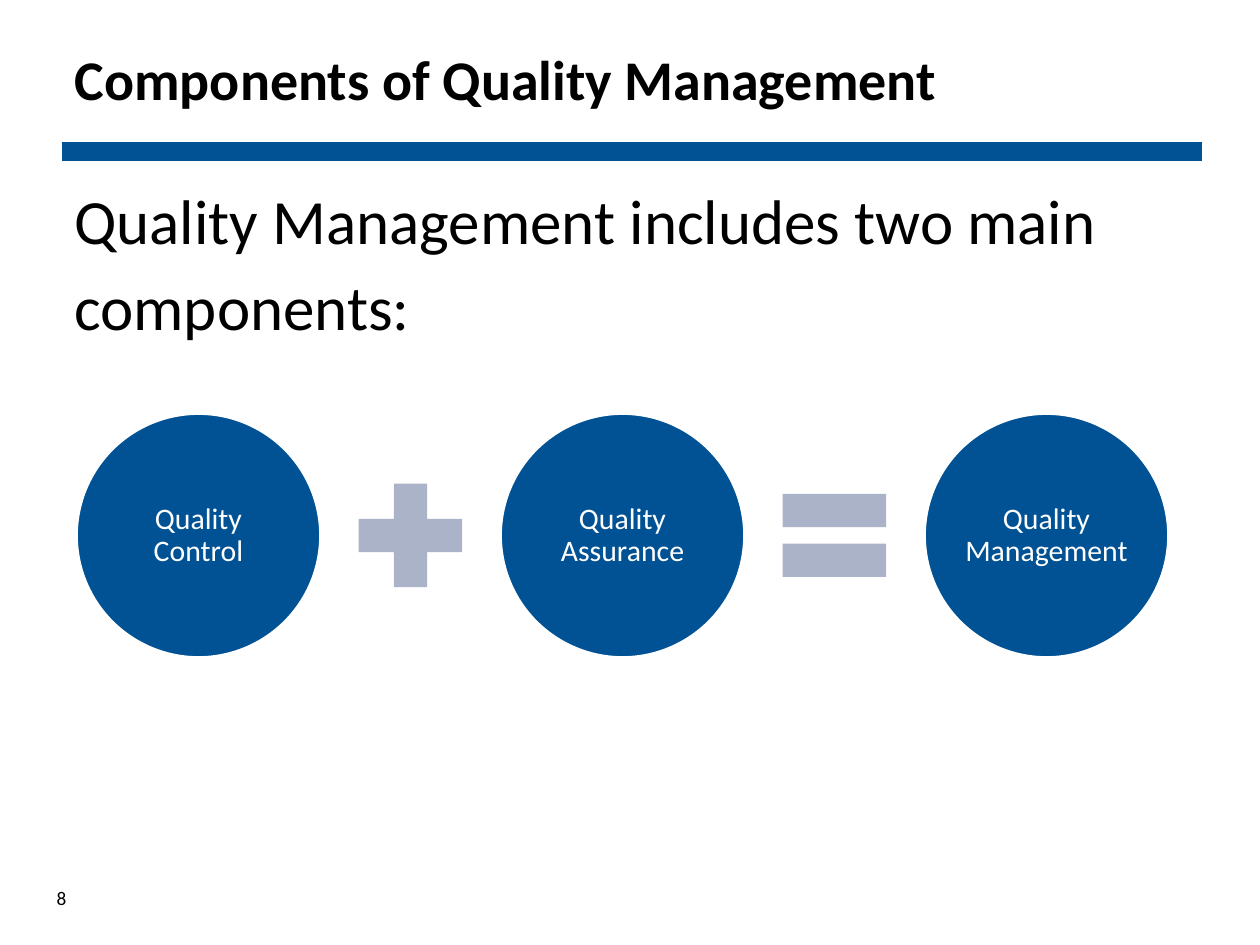
import dataclasses

import pptx
import pptx.dml.color
import pptx.enum.shapes
import pptx.enum.text
import pptx.util

SCALE = 914400 / 126  # EMU in one px
FONT = "Calibri"
BLUE, GREY, BLACK, WHITE = "005294", "ABB3C8", "000000", "FFFFFF"
SHAPES = pptx.enum.shapes.MSO_SHAPE
ALIGN = pptx.enum.text.PP_ALIGN
ANCHOR = pptx.enum.text.MSO_ANCHOR

MARGIN, CONTENT_WIDTH = 62, 1140
ROW_LEFT, ROW_CENTER = 77, 535
CIRCLE_SIZE, OPERATOR_SIZE, GAP = 243, 141, 20


@dataclasses.dataclass
class Term:
    """One member of the equation: a labelled circle or an operator sign."""
    kind: SHAPES
    size: int
    fill: str
    label: str = ""


EQUATION = [
    Term(SHAPES.OVAL, CIRCLE_SIZE, BLUE, "Quality Control"),
    Term(SHAPES.MATH_PLUS, OPERATOR_SIZE, GREY),
    Term(SHAPES.OVAL, CIRCLE_SIZE, BLUE, "Quality Assurance"),
    Term(SHAPES.MATH_EQUAL, OPERATOR_SIZE, GREY),
    Term(SHAPES.OVAL, CIRCLE_SIZE, BLUE, "Quality Management"),
]


def px(length: int) -> int:
    return round(length * SCALE)


def color(value: str) -> pptx.dml.color.RGBColor:
    return pptx.dml.color.RGBColor.from_string(value)


def write(box, text: str, size: int, ink: str = BLACK, bold: bool = False,
          align=ALIGN.LEFT, anchor=ANCHOR.MIDDLE, spacing: float = 0.9,
          space_before: int = 0) -> None:
    """Fill a box with text; space_before applies from the second paragraph."""
    frame = box.text_frame
    frame.text = text
    frame.word_wrap = True
    frame.auto_size = pptx.enum.text.MSO_AUTO_SIZE.NONE
    frame.vertical_anchor = anchor
    for index, para in enumerate(frame.paragraphs):
        para.alignment = align
        para.line_spacing = spacing
        para.space_before = pptx.util.Pt(space_before if index else 0)
        for span in para.runs:
            span.font.name = FONT
            span.font.size = pptx.util.Pt(size)
            span.font.bold = bold
            span.font.color.rgb = color(ink)


def add_filled(slide, kind, left: int, top: int, width: int, height: int, fill: str):
    shape = slide.shapes.add_shape(kind, px(left), px(top), px(width), px(height))
    shape.shadow.inherit = False
    shape.fill.solid()
    shape.fill.fore_color.rgb = color(fill)
    shape.line.fill.background()
    return shape


def add_text_box(slide, left: int, top: int, width: int, height: int):
    return slide.shapes.add_textbox(px(left), px(top), px(width), px(height))


def add_term(slide, term: Term, left: int) -> None:
    top = ROW_CENTER - term.size // 2
    shape = add_filled(slide, term.kind, left, top, term.size, term.size, term.fill)
    if term.label:
        shape.line.color.rgb = color(WHITE)
        shape.line.width = pptx.util.Pt(1)
        frame = shape.text_frame
        frame.margin_left = frame.margin_right = px(2)
        frame.margin_top = frame.margin_bottom = px(2)
        write(shape, term.label, 17, WHITE, align=ALIGN.CENTER)


def main() -> None:
    deck = pptx.Presentation()
    deck.slide_width, deck.slide_height = px(1260), px(945)
    slide = deck.slides.add_slide(deck.slide_layouts.get_by_name("Title Only"))

    add_filled(slide, SHAPES.RECTANGLE, MARGIN, 142, CONTENT_WIDTH, 19, BLUE)

    title = slide.shapes.title
    title.left, title.top = px(MARGIN), px(23)
    title.width, title.height = px(CONTENT_WIDTH), px(118)
    write(title, "Components of Quality Management", 32, bold=True)

    body = add_text_box(slide, MARGIN, 184, CONTENT_WIDTH, 672)
    write(body, "Quality Management includes two main\ncomponents:", 36,
          anchor=ANCHOR.TOP, space_before=10)

    left = ROW_LEFT
    for term in EQUATION:
        add_term(slide, term, left)
        left += term.size + GAP

    number = add_text_box(slide, 34, 883, 55, 29)
    write(number, "8", 11, align=ALIGN.CENTER, spacing=1.0)

    deck.save("out.pptx")


if __name__ == "__main__":
    main()
